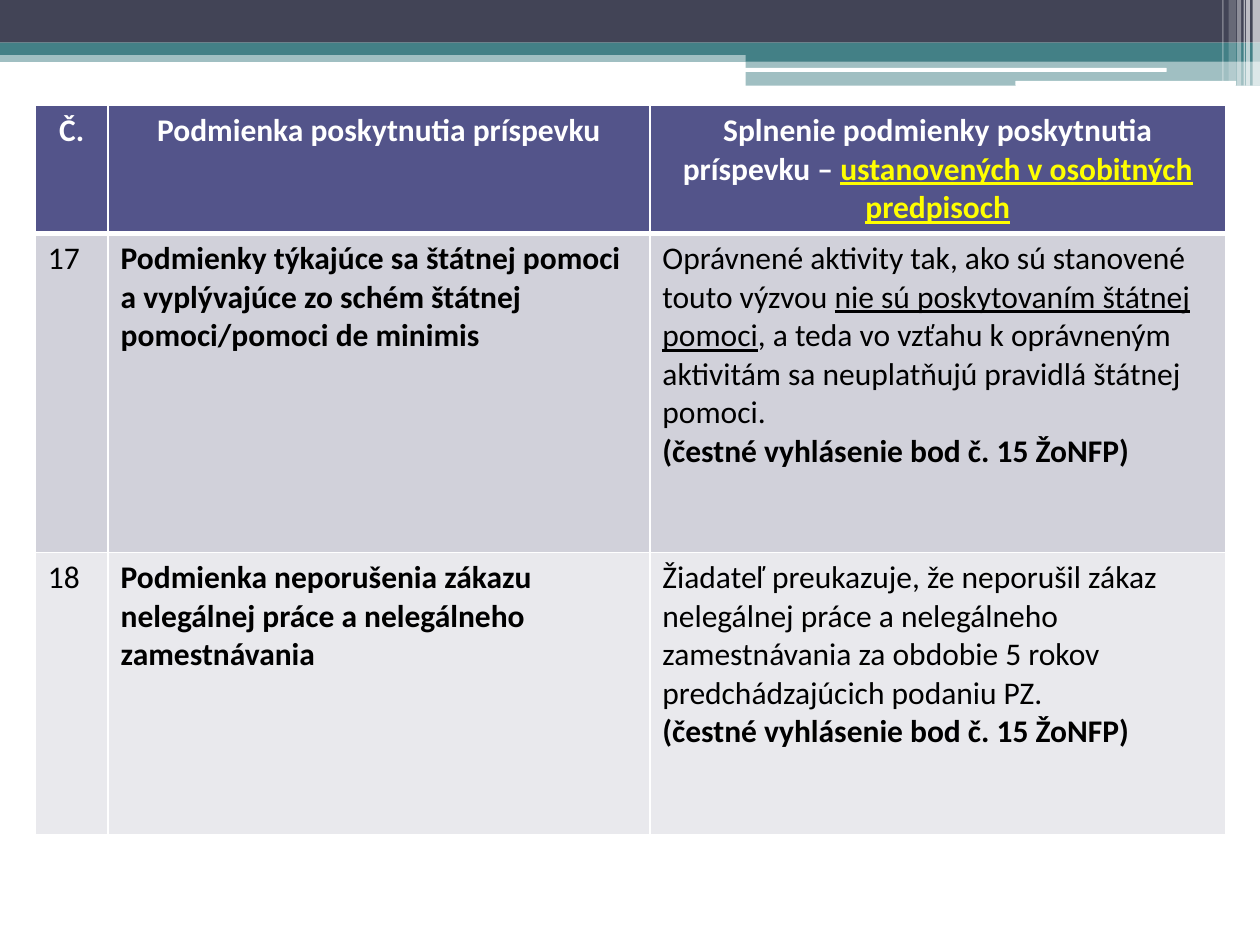
from lxml import etree
from pptx import Presentation
from pptx.dml.color import RGBColor
from pptx.enum.shapes import MSO_SHAPE
from pptx.enum.text import PP_ALIGN
from pptx.oxml.ns import qn
from pptx.util import Cm, Pt

RECTANGLE = MSO_SHAPE.RECTANGLE
ROUNDED = MSO_SHAPE.ROUNDED_RECTANGLE
CENTER, LEFT = PP_ALIGN.CENTER, PP_ALIGN.LEFT

COLORS = {
    "white": "FFFFFF",
    "black": "000000",
    "yellow": "FFFF00",
    "navy": "424456",
    "teal": "438086",
    "header": "53548A",
    "odd": "D1D1DA",
    "even": "E9E9ED",
}
FONT = "Calibri"
SLIDE_WIDTH, SLIDE_HEIGHT = 25.4, 19.05

BANDS = [
    (RECTANGLE, 0, 1.02, 25.4, 0.23, "teal", 50),
    (RECTANGLE, 0, 0, 25.4, 0.86, "navy", 100),
    (RECTANGLE, 0, 0.86, 25.4, 0.25, "teal", 100),
    (RECTANGLE, 15.03, 0.99, 10.37, 0.25, "teal", 100),
    (RECTANGLE, 15.03, 1.23, 10.37, 0.5, "teal", 50),
    (ROUNDED, 15.01, 1.37, 8.51, 0.08, "white", 100),
    (ROUNDED, 20.47, 1.63, 4.45, 0.1, "white", 100),
]
STRIPES = [
    (25.25, 0.15, 1.73, 65),
    (25.12, 0.08, 1.73, 65),
    (25.07, 0.03, 1.73, 60),
    (24.94, 0.08, 1.73, 40),
    (24.77, 0.15, 1.63, 20),
    (24.64, 0.03, 1.63, 30),
]

COLUMN_WIDTHS = [1.47, 10.92, 11.61]
ROW_HEIGHTS = [2.57, 6.43, 5.68]
ROW_FILLS = ["header", "odd", "even"]
BOLD = {"bold": True}
HEADING = {"bold": True, "color": "white"}
DECLARATION = [("(čestné vyhlásenie bod č. 15 ŽoNFP)", BOLD)]
ROWS = [
    [
        [[("Č.", HEADING)]],
        [[("Podmienka poskytnutia príspevku", HEADING)]],
        [[
            ("Splnenie podmienky poskytnutia príspevku – ", HEADING),
            ("ustanovených v osobitných predpisoch",
             {"bold": True, "color": "yellow", "underline": True}),
        ]],
    ],
    [
        [[("17", {})]],
        [[("Podmienky týkajúce sa štátnej pomoci a vyplývajúce zo schém "
           "štátnej pomoci/pomoci de minimis", BOLD)]],
        [
            [
                ("Oprávnené aktivity tak, ako sú stanovené touto výzvou ", {}),
                ("nie sú poskytovaním štátnej pomoci", {"underline": True}),
                (", a teda vo vzťahu k oprávneným aktivitám sa neuplatňujú "
                 "pravidlá štátnej pomoci.", {}),
            ],
            DECLARATION,
        ],
    ],
    [
        [[("18", {})]],
        [[("Podmienka neporušenia zákazu nelegálnej práce a nelegálneho "
           "zamestnávania", BOLD)]],
        [
            [("Žiadateľ preukazuje, že neporušil zákaz nelegálnej práce "
              "a nelegálneho zamestnávania za obdobie 5 rokov "
              "predchádzajúcich podaniu PZ.", {})],
            DECLARATION,
        ],
    ],
]


def paint(fill, color, opacity=100):
    """Give a fill a solid colour with an opacity in percent."""
    fill.solid()
    fill.fore_color.rgb = RGBColor.from_string(COLORS[color])
    if opacity < 100:
        element = fill._xPr.find(qn("a:solidFill"))[0]
        etree.SubElement(element, qn("a:alpha"), val=str(opacity * 1000))


def add_block(page, kind, left, top, width, height, color, opacity):
    """Add one plain filled shape, measured in centimetres."""
    shape = page.shapes.add_shape(kind, Cm(left), Cm(top), Cm(width), Cm(height))
    shape.shadow.inherit = False
    shape.line.fill.background()
    paint(shape.fill, color, opacity)


def add_banner(page, box):
    """Draw the layered top banner with its light stripes at the right."""
    left, top = box
    for kind, x, y, width, height, color, opacity in BANDS:
        add_block(page, kind, left + x, top + y, width, height, color, opacity)
    for x, width, height, opacity in STRIPES:
        add_block(page, RECTANGLE, left + x, top, width, height, "white", opacity)


def add_span(para, text, size=18, bold=False, underline=False, color="black"):
    """Append formatted text to a paragraph."""
    span = para.add_run()
    span.text = text
    font = span.font
    font.name, font.size = FONT, Pt(size)
    font.bold, font.underline = bold, underline
    font.color.rgb = RGBColor.from_string(COLORS[color])


def set_borders(cell, bottom, top):
    """Outline a cell in white with the given bottom and top widths in points."""
    properties = cell._tc.get_or_add_tcPr()
    sides = [("a:lnL", 1), ("a:lnR", 1), ("a:lnT", top), ("a:lnB", bottom)]
    for index, (tag, width) in enumerate(sides):
        line = etree.Element(qn(tag), w=str(Pt(width)))
        fill = etree.SubElement(line, qn("a:solidFill"))
        etree.SubElement(fill, qn("a:srgbClr"), val=COLORS["white"])
        properties.insert(index, line)


def fill_cell(cell, paragraphs, align):
    """Write a cell's paragraphs."""
    for index, spans in enumerate(paragraphs):
        frame = cell.text_frame
        para = frame.add_paragraph() if index else frame.paragraphs[0]
        para.alignment = align
        for text, style in spans:
            add_span(para, text, **style)


def add_conditions(page, box):
    """Build the table of grant conditions."""
    left, top = box
    table = page.shapes.add_table(
        len(ROWS), len(COLUMN_WIDTHS), Cm(left), Cm(top),
        Cm(sum(COLUMN_WIDTHS)), Cm(sum(ROW_HEIGHTS)),
    ).table
    for column, width in zip(table.columns, COLUMN_WIDTHS):
        column.width = Cm(width)
    for index, (row, height) in enumerate(zip(table.rows, ROW_HEIGHTS)):
        row.height = Cm(height)
        for cell, paragraphs in zip(row.cells, ROWS[index]):
            fill_cell(cell, paragraphs, LEFT if index else CENTER)
            paint(cell.fill, ROW_FILLS[index])
            set_borders(cell, bottom=1 if index else 3, top=3 if index == 1 else 1)


def main():
    """Create the deck and save it."""
    deck = Presentation()
    deck.slide_width, deck.slide_height = Cm(SLIDE_WIDTH), Cm(SLIDE_HEIGHT)
    page = deck.slides.add_slide(deck.slide_layouts[6])
    add_banner(page, (0, 0))
    add_conditions(page, (0.71, 2.13))
    deck.save("out.pptx")


if __name__ == "__main__":
    main()
